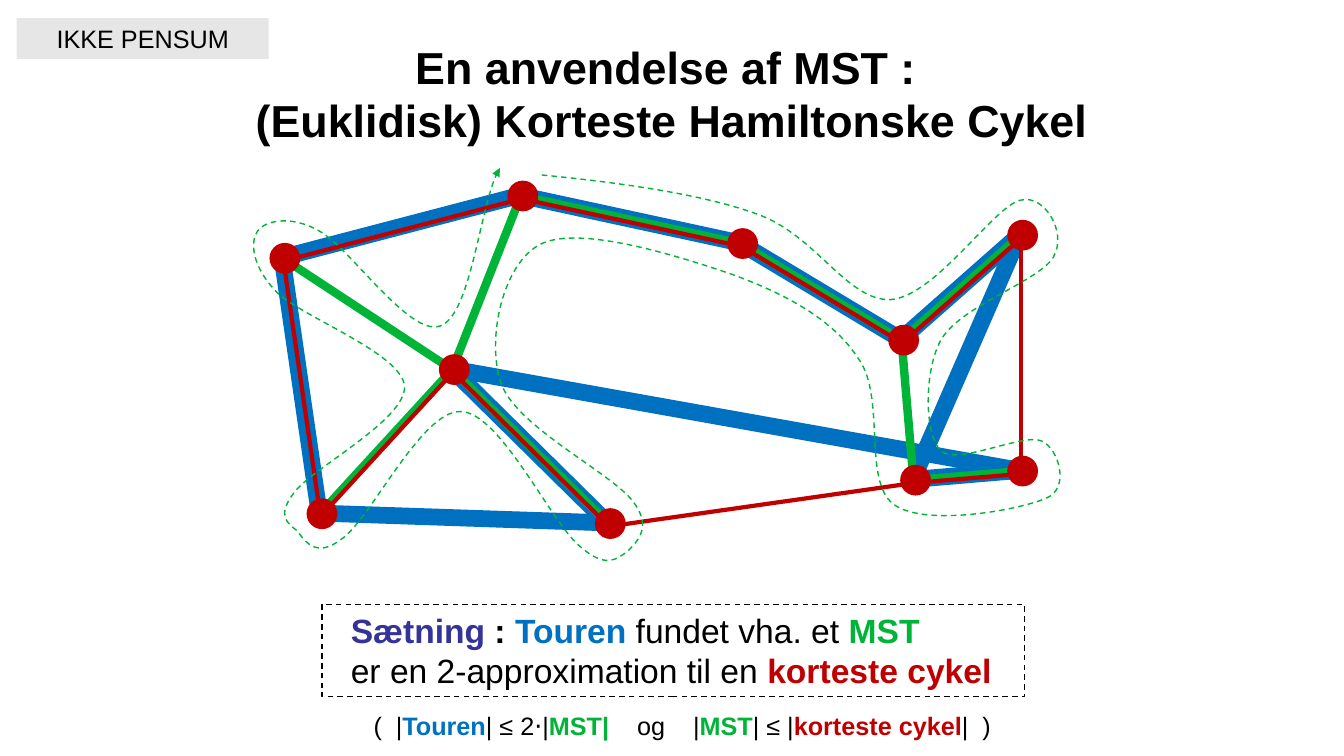
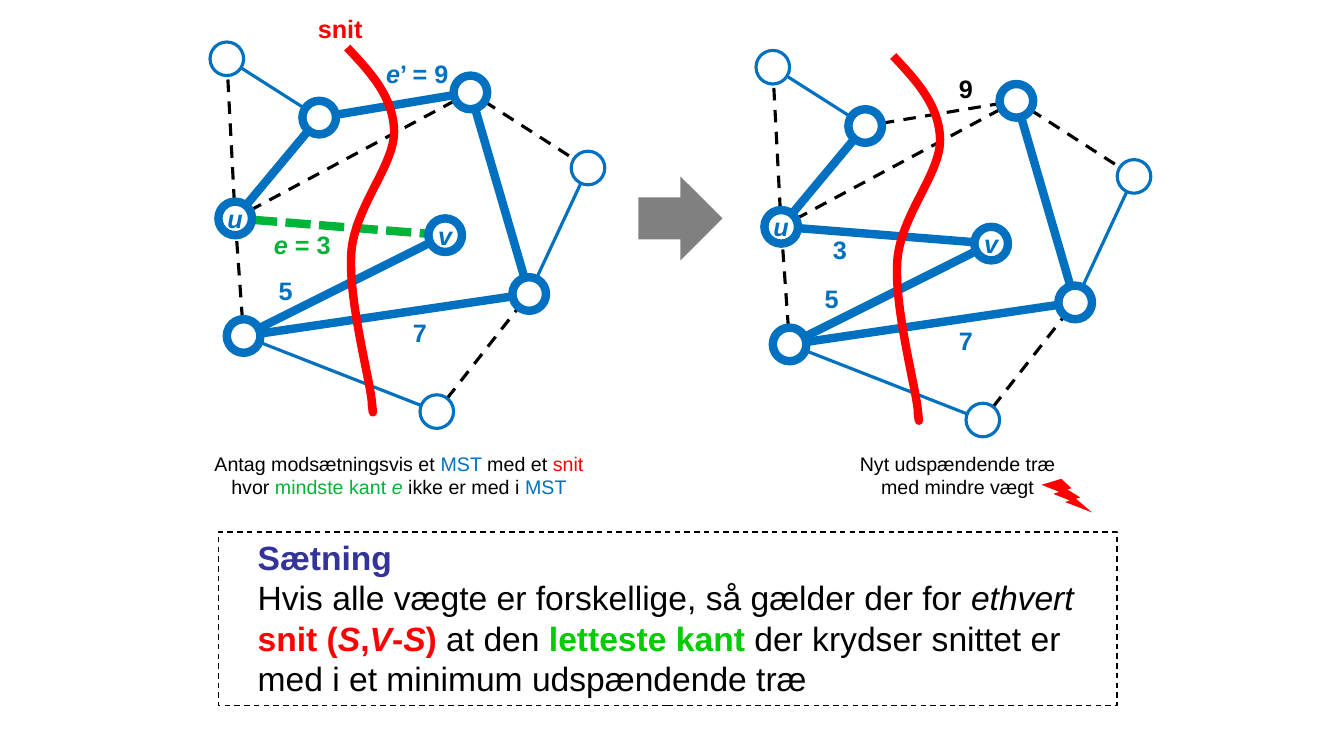
from math import hypot
from lxml.etree import SubElement
from pptx import Presentation
from pptx.dml.color import RGBColor
from pptx.enum.dml import MSO_LINE
from pptx.enum.shapes import MSO_CONNECTOR, MSO_SHAPE
from pptx.enum.text import MSO_ANCHOR, PP_ALIGN
from pptx.oxml.ns import qn
from pptx.util import Pt

BLACK = RGBColor(0x00, 0x00, 0x00)
BLUE = RGBColor(0x00, 0x70, 0xC0)
GREEN = RGBColor(0x00, 0xB4, 0x38)
LIME = RGBColor(0x00, 0xCC, 0x00)
DARK_RED = RGBColor(0xC0, 0x00, 0x00)
RED = RGBColor(0xFF, 0x00, 0x00)
INDIGO = RGBColor(0x33, 0x33, 0x99)
GREY = RGBColor(0x80, 0x80, 0x80)
LIGHT_GREY = RGBColor(0xE6, 0xE6, 0xE6)
FONT = "Arial"
DASH, SHORT_DASH = MSO_LINE.DASH, MSO_LINE.SQUARE_DOT
LEFT, CENTER = PP_ALIGN.LEFT, PP_ALIGN.CENTER
TOP, MIDDLE = MSO_ANCHOR.TOP, MSO_ANCHOR.MIDDLE
BOLD = {"bold": True}
ITALIC = {"italic": True}
BOLD_ITALIC = {"bold": True, "italic": True}


def paint(shape, color=None, width=1, dash=None, fill=None):
    """Set line and fill, without shadow; connectors take no fill."""
    if color is None:
        shape.line.fill.background()
    else:
        shape.line.color.rgb = color
        shape.line.width = Pt(width)
        shape.line.dash_style = dash
    if fill is not None:
        shape.fill.solid()
        shape.fill.fore_color.rgb = fill
    elif hasattr(shape, "fill"):
        shape.fill.background()
    SubElement(shape.element.spPr, qn("a:effectLst"))


def write(shape, paragraphs, size, align=CENTER, anchor=TOP, indent=0, wrap=True):
    """Each paragraph is a list of runs: (text, colour, font formats)."""
    tf = shape.text_frame
    tf.word_wrap = wrap
    tf.vertical_anchor = anchor
    for i, runs in enumerate(paragraphs):
        p = tf.add_paragraph() if i else tf.paragraphs[0]
        p.alignment = align
        p._p.get_or_add_pPr().set("marL", str(Pt(indent)))
        for text, color, formats in runs:
            r = p.add_run()
            r.text = text
            values = {"name": FONT, "size": Pt(size), "bold": False, "italic": False}
            for name, value in (values | formats).items():
                if name == "spacing":
                    r._r.get_or_add_rPr().set("spc", str(value * 100))
                else:
                    setattr(r.font, name, value)
            r.font.color.rgb = color


prs = Presentation()
prs.slide_width, prs.slide_height = Pt(960), Pt(540)
tour_slide, cut_slide = [prs.slides.add_slide(prs.slide_layouts[6]) for _ in range(2)]

# Slide 1: tour, spanning tree and shortest cycle
s = tour_slide.shapes
points = {
    "a": (203.5, 184.5), "b": (654, 343), "c": (324.5, 264), "d": (645.5, 243),
    "e": (436, 374), "f": (230, 367), "g": (373.5, 140), "h": (730.5, 336.5),
    "i": (530.5, 174), "j": (730.5, 168),
}
layers = [  # colour, width, offset, edges
    (BLUE, 12, (-2, -0.5), "ch fe ec fa ig di jb jd hb ga"),
    (GREEN, 6, (-1.5, 0), "fc ec cg ca ig di db jd hb"),
    (DARK_RED, 3, (-1, 2), "eb fc ec fa ig di jh jd hb ag"),
]
for color, width, (dx, dy), edges in layers:
    for start, end in edges.split():
        (x1, y1), (x2, y2) = points[start], points[end]
        edge = s.add_connector(MSO_CONNECTOR.STRAIGHT, Pt(x1 + dx), Pt(y1 + dy),
                               Pt(x2 + dx), Pt(y2 + dy))
        paint(edge, color, width)
for x, y in points.values():
    dot = s.add_shape(MSO_SHAPE.OVAL, Pt(x - 11), Pt(y - 11), Pt(22), Pt(22))
    paint(dot, fill=DARK_RED)

title = s.add_textbox(Pt(48), Pt(21.5), Pt(864), Pt(90))
write(title, [[("En anvendelse af MST : ", BLACK, BOLD)],
              [("(Euklidisk) Korteste Hamiltonske Cykel", BLACK, BOLD)]], 32, anchor=MIDDLE)

tag = s.add_shape(MSO_SHAPE.RECTANGLE, Pt(12), Pt(13), Pt(180), Pt(29))
paint(tag, fill=LIGHT_GREY)
write(tag, [[("IKKE PENSUM", BLACK, {})]], 18)

theorem = s.add_shape(MSO_SHAPE.RECTANGLE, Pt(230), Pt(432), Pt(502), Pt(65.5))
paint(theorem, BLACK, 1, DASH)
write(theorem, [
    [("Sætning", INDIGO, BOLD), (" : ", BLACK, BOLD), ("Touren", BLUE, BOLD),
     (" fundet vha. et ", BLACK, {}), ("MST", GREEN, BOLD)],
    [("er en 2-approximation til en ", BLACK, {}), ("korteste cykel", DARK_RED, BOLD)],
], 24, LEFT, indent=13.5)

small_gap = (" ", BLACK, {"spacing": 5})
wide_gap = (" ", BLACK, {"spacing": 15})
bounds = s.add_textbox(Pt(229), Pt(504), Pt(503), Pt(29))
write(bounds, [[
    ("(", BLACK, {}), small_gap, ("|", BLACK, {}), ("Touren", BLUE, BOLD),
    ("| ≤ 2⋅|", BLACK, {}), ("MST|", GREEN, BOLD), wide_gap, ("og", BLACK, {}), wide_gap,
    ("|", BLACK, {}), ("MST", GREEN, BOLD), ("| ≤ |", BLACK, {}),
    ("korteste cykel", DARK_RED, BOLD), ("|", BLACK, {}), small_gap, (")", BLACK, {}),
]], 18, indent=13.5)

# Slide 2: the same graph before and after the edge swap
s = cut_slide.shapes
RADIUS = 12
nodes = {  # centre and outline width
    "p": (228, 84, 6), "u": (168, 156, 6), "w": (174, 240, 6), "x": (378, 210, 6),
    "y": (336, 66, 6), "v": (318, 168, 6),
    "k": (162, 42, 2.25), "l": (420, 120, 2.25), "m": (312, 294, 2.25),
}
DASHED, TREE, THIN = (BLACK, 2.25, DASH), (BLUE, 6, None), (BLUE, 2.25, None)
LIGHTEST = (GREEN, 6, SHORT_DASH)
shared_edges = [(DASHED, "uy mx uk wu yl"), (TREE, "pu yx xw wv"), (THIN, "pk xl wm")]
shared_labels = [(204, 193, [("5", BLUE, BOLD)]), (300, 223, [("7", BLUE, BOLD)])]
graphs = [  # offset, own edges, own labels
    (0, 0, [(TREE, "py"), (LIGHTEST, "uv")],
     [(298, 38, [("e", BLUE, BOLD_ITALIC), ("’ = 9", BLUE, BOLD)]),
      (216, 160.5, [("e", GREEN, BOLD_ITALIC), (" = 3", GREEN, BOLD)]),
      (243, 6, [("snit", RED, BOLD)])]),
    (390, 6, [(DASHED, "py"), (TREE, "uv")],
     [(300, 43, [("9", BLACK, BOLD)]), (210, 158, [("3", BLUE, BOLD)])]),
]
for dx, dy, own_edges, own_labels in graphs:
    for style, edges in shared_edges + own_edges:
        for start, end in edges.split():
            (x1, y1, _), (x2, y2, _) = nodes[start], nodes[end]
            trim = RADIUS / hypot(x2 - x1, y2 - y1)
            tx, ty = trim * (x2 - x1), trim * (y2 - y1)
            edge = s.add_connector(MSO_CONNECTOR.STRAIGHT, Pt(x1 + tx + dx), Pt(y1 + ty + dy),
                                   Pt(x2 - tx + dx), Pt(y2 - ty + dy))
            paint(edge, *style)
    for name, (x, y, width) in nodes.items():
        ring = s.add_shape(MSO_SHAPE.OVAL, Pt(x - RADIUS + dx), Pt(y - RADIUS + dy),
                           Pt(2 * RADIUS), Pt(2 * RADIUS))
        paint(ring, BLUE, width)
        if name in "uv":
            write(ring, [[(name, BLUE, BOLD_ITALIC)]], 18, anchor=MIDDLE, wrap=False)
    for x, y, runs in shared_labels + own_labels:
        label = s.add_textbox(Pt(x - 36 + dx), Pt(y + dy), Pt(72), Pt(29))
        write(label, [runs], 18)

for kind, x, y, w, h, color in [
    (MSO_SHAPE.RIGHT_ARROW, 456, 126, 60, 60, GREY),
    (MSO_SHAPE.LIGHTNING_BOLT, 744, 342, 36, 24, RED),
]:
    paint(s.add_shape(kind, Pt(x), Pt(y), Pt(w), Pt(h)), fill=color)

# Captions
for x, w, runs in [
    (144, 282, [("Antag modsætningsvis et ", BLACK, {}), ("MST ", BLUE, {}),
                ("med et ", BLACK, {}), ("snit", RED, {}), (" hvor ", BLACK, {}),
                ("mindste kant ", GREEN, {}), ("e", GREEN, ITALIC),
                (" ikke er med i ", BLACK, {}), ("MST", BLUE, {})]),
    (606, 156, [("Nyt udspændende træ med mindre vægt", BLACK, {})]),
]:
    write(s.add_textbox(Pt(x), Pt(319), Pt(w), Pt(41)), [runs], 14)

theorem = s.add_shape(MSO_SHAPE.RECTANGLE, Pt(156), Pt(380), Pt(642), Pt(124))
paint(theorem, BLACK, 1, DASH)
write(theorem, [
    [("Sætning", INDIGO, BOLD)],
    [("Hvis alle vægte er forskellige, så gælder der for ", BLACK, {}),
     ("ethvert ", BLACK, ITALIC), ("snit (", RED, BOLD), ("S", RED, BOLD_ITALIC),
     (",", RED, BOLD), ("V", RED, BOLD_ITALIC), ("-", RED, BOLD), ("S", RED, BOLD_ITALIC),
     (") ", RED, BOLD), ("at den ", BLACK, {}), ("letteste kant ", LIME, BOLD),
     ("der krydser snittet er med i et minimum udspændende træ", BLACK, {})],
], 24, LEFT, indent=21)

# Curves: a start point, then two control points and an end point per piece
walk = [
    (387, 125), (438, 130), (500, 138), (541, 153), (583, 168), (605, 215), (636, 214),
    (668, 212), (710, 147), (729, 143), (747, 138), (765, 170), (750, 187),
    (734, 204), (685, 220), (672, 243), (660, 265), (660, 310), (672, 322),
    (683, 333), (731, 309), (744, 315), (756, 320), (765, 349), (747, 356),
    (729, 364), (660, 377), (638, 360), (616, 343), (633, 283), (613, 256),
    (595, 228), (561, 210), (523, 196), (485, 183), (415, 161), (387, 174),
    (359, 187), (347, 243), (358, 274), (369, 305), (437, 338), (452, 358),
    (467, 377), (454, 388), (448, 394), (441, 399), (433, 407), (414, 390),
    (394, 374), (357, 294), (329, 294), (301, 293), (264, 372), (244, 385),
    (225, 400), (217, 385), (212, 379), (206, 374), (197, 369), (210, 352),
    (222, 335), (290, 300), (289, 276), (287, 252), (214, 226), (197, 208),
    (179, 189), (179, 172), (184, 165), (189, 158), (207, 153), (228, 165),
    (250, 177), (292, 240), (314, 233), (336, 226), (343, 143), (357, 120),
]
cut = [
    (248, 34), (264, 51), (281, 69), (281.5, 93.5), (282, 118), (253.5, 147.5), (251, 180),
    (248.5, 212.5), (263.5, 268), (265.5, 286), (267.5, 304), (265.5, 288), (265.5, 288),
]
curves = [(tour_slide, walk, 0, 0, (GREEN, 1, DASH), True)]
curves += [(cut_slide, cut, dx, dy, (RED, 6), False) for dx, dy, _, _ in graphs]
for slide, controls, dx, dy, style, arrow in curves:
    (x, y), *rest = [(Pt(x + dx), Pt(y + dy)) for x, y in controls]
    builder = slide.shapes.build_freeform(x, y)
    builder.add_line_segments(rest, close=False)
    curve = builder.convert_to_shape()
    outline = next(curve.element.iter(qn("a:path")))
    steps = outline.findall(qn("a:lnTo"))
    for i in range(0, len(steps), 3):
        bezier = SubElement(outline, qn("a:cubicBezTo"))
        for step in steps[i:i + 3]:
            bezier.append(step[0])
            outline.remove(step)
    paint(curve, *style)
    if arrow:
        SubElement(curve.line._get_or_add_ln(), qn("a:tailEnd"), type="triangle")

prs.save("out.pptx")
